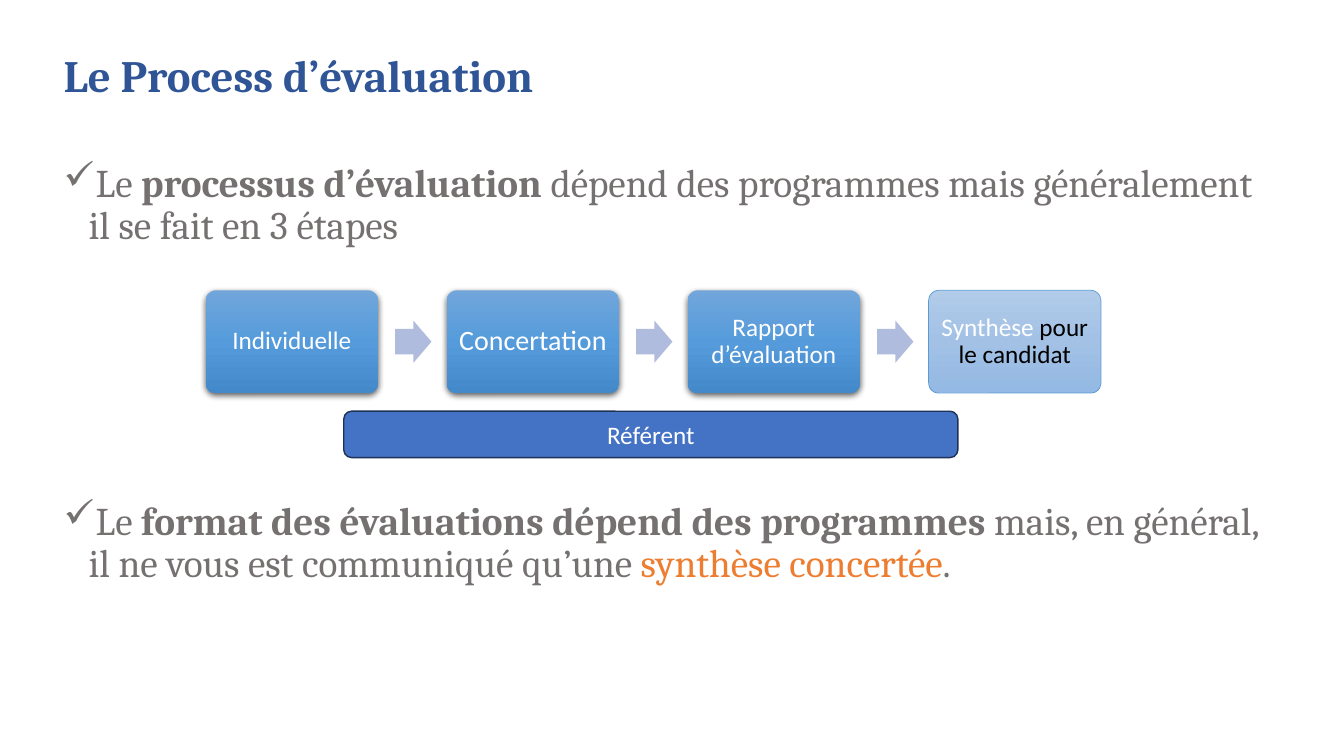
from dataclasses import dataclass
from typing import Any

from lxml import etree
from pptx import Presentation
from pptx import util as u
from pptx.dml.color import RGBColor
from pptx.enum import shapes, text
from pptx.oxml.ns import qn

WHITE, GREY, ORANGE = "FFFFFF", "767171", "ED7D31"
BLUES = ("71A6DB", "559BDB", "448ACA")
PALE_BLUES = ("B1CBE9", "A3C1E5", "93B9E4")


@dataclass
class Run:
    words: str
    color: str = WHITE
    size: int = 18
    font: str = "Calibri"
    bold: bool = False


@dataclass
class Step:
    runs: list[Run]
    stops: tuple[str, ...] = BLUES
    outline: str = ""


STEPS = [
    Step([Run("Individuelle")]),
    Step([Run("Concertation", size=20)]),
    Step([Run("Rapport d’évaluation")]),
    Step([Run("Synthèse"), Run(" pour le candidat", "000000")], PALE_BLUES, "5B9BD5"),
]


def body_run(words: str, color: str = GREY, bold: bool = False) -> Run:
    return Run(words, color, 28, "Cambria", bold)


POINTS = [
    [body_run("Le "), body_run("processus d’évaluation ", bold=True),
     body_run("dépend des programmes mais généralement il se fait en 3 étapes")],
    [body_run("Le "), body_run("format des évaluations dépend des programmes ", bold=True),
     body_run("mais, en général, il ne vous est communiqué qu’une "),
     body_run("synthèse concertée", ORANGE), body_run(".")],
]


def rgb(value: str) -> RGBColor:
    return RGBColor.from_string(value)


def apply(target: Any, values: dict[str, Any]) -> None:
    for name, value in values.items():
        setattr(target, name, value)


def write(p: Any, runs: list[Run], **paragraph_format: Any) -> None:
    apply(p, paragraph_format)
    for run in runs:
        r = p.add_run()
        r.text = run.words
        apply(r.font, {"name": run.font, "size": u.Pt(run.size), "bold": run.bold})
        r.font.color.rgb = rgb(run.color)


def add_shape(slide: Any, kind: Any, box: tuple[float, ...], fill: str = "",
              line: str = "", line_width: float = 1) -> Any:
    sp = slide.shapes.add_shape(kind, *map(u.Inches, box))
    sp.shadow.inherit = False
    if fill:
        sp.fill.solid()
        sp.fill.fore_color.rgb = rgb(fill)
    if line:
        sp.line.color.rgb = rgb(line)
        sp.line.width = u.Pt(line_width)
    else:
        sp.line.fill.background()
    apply(sp.text_frame, {"word_wrap": True, "vertical_anchor": text.MSO_ANCHOR.MIDDLE})
    return sp


def set_gradient(sp: Any, stops: tuple[str, ...]) -> None:
    sp.fill.gradient()
    sp.fill.gradient_angle = 270
    gradient = sp._element.spPr.find(qn("a:gradFill")).find(qn("a:gsLst"))
    for stop in list(gradient):
        gradient.remove(stop)
    for i, color in enumerate(stops):
        stop = etree.SubElement(gradient, qn("a:gs"), pos=str(i * 50000))
        etree.SubElement(stop, qn("a:srgbClr"), val=color)


def add_shadow(sp: Any) -> None:
    effects = sp._element.spPr.find(qn("a:effectLst"))
    shadow = etree.SubElement(effects, qn("a:outerShdw"), blurRad=str(u.Pt(4.5)),
                              dist=str(u.Pt(1.5)), dir="5400000", algn="ctr", rotWithShape="0")
    color = etree.SubElement(shadow, qn("a:srgbClr"), val="000000")
    etree.SubElement(color, qn("a:alpha"), val="63000")


def add_title(slide: Any) -> None:
    title = slide.shapes.title
    apply(title, {"left": u.Inches(0.53), "top": u.Inches(0.4),
                  "width": u.Inches(12.26), "height": u.Inches(0.75)})
    apply(title.text_frame, {"word_wrap": True, "vertical_anchor": text.MSO_ANCHOR.MIDDLE})
    write(title.text_frame.paragraphs[0],
          [Run("Le Process d’évaluation", "2F5597", 32, "Cambria", True)],
          alignment=text.PP_ALIGN.LEFT, line_spacing=0.9)


def add_points(slide: Any) -> None:
    box = slide.shapes.add_textbox(*map(u.Inches, (0.53, 1.57, 12.26, 5.38)))
    tf = box.text_frame
    tf.word_wrap = True
    for i, runs in enumerate(POINTS):
        p = tf.add_paragraph() if i else tf.paragraphs[0]
        write(p, runs, line_spacing=0.9, space_before=u.Pt(181 if i else 0))
        pPr = p._p.get_or_add_pPr()
        pPr.set("marL", str(u.Inches(0.25)))
        pPr.set("indent", str(u.Inches(-0.25)))
        etree.SubElement(pPr, qn("a:buFont"), typeface="Wingdings", charset="2")
        etree.SubElement(pPr, qn("a:buChar"), char="ü")


def add_steps(slide: Any) -> None:
    left, pitch, width = 2.04, 2.39, 1.71
    for i, step in enumerate(STEPS):
        x = left + i * pitch
        sp = add_shape(slide, shapes.MSO_SHAPE.ROUNDED_RECTANGLE, (x, 2.88, width, 1.02),
                       line=step.outline, line_width=0.5)
        sp.adjustments[0] = 0.1
        set_gradient(sp, step.stops)
        if not step.outline:
            add_shadow(sp)
        inset = u.Inches(0.06)
        apply(sp.text_frame, {"margin_left": inset, "margin_right": inset,
                              "margin_top": inset, "margin_bottom": inset})
        write(sp.text_frame.paragraphs[0], step.runs,
              alignment=text.PP_ALIGN.CENTER, line_spacing=0.9)
        if i < len(STEPS) - 1:
            arrow = add_shape(slide, shapes.MSO_SHAPE.RIGHT_ARROW,
                              (x + width + 0.17, 3.18, 0.36, 0.42), "B0BCDE")
            arrow.adjustments[0] = 0.6


def add_referent(slide: Any) -> None:
    sp = add_shape(slide, shapes.MSO_SHAPE.ROUNDED_RECTANGLE, (3.41, 4.08, 6.09, 0.46),
                   "4472C4", "1E3256")
    write(sp.text_frame.paragraphs[0], [Run("Référent")], alignment=text.PP_ALIGN.CENTER)


def main() -> None:
    prs = Presentation()
    apply(prs, {"slide_width": u.Inches(13.33), "slide_height": u.Inches(7.5)})
    slide = prs.slides.add_slide(prs.slide_layouts[5])
    add_title(slide)
    add_points(slide)
    add_steps(slide)
    add_referent(slide)
    prs.save("out.pptx")


if __name__ == "__main__":
    main()
